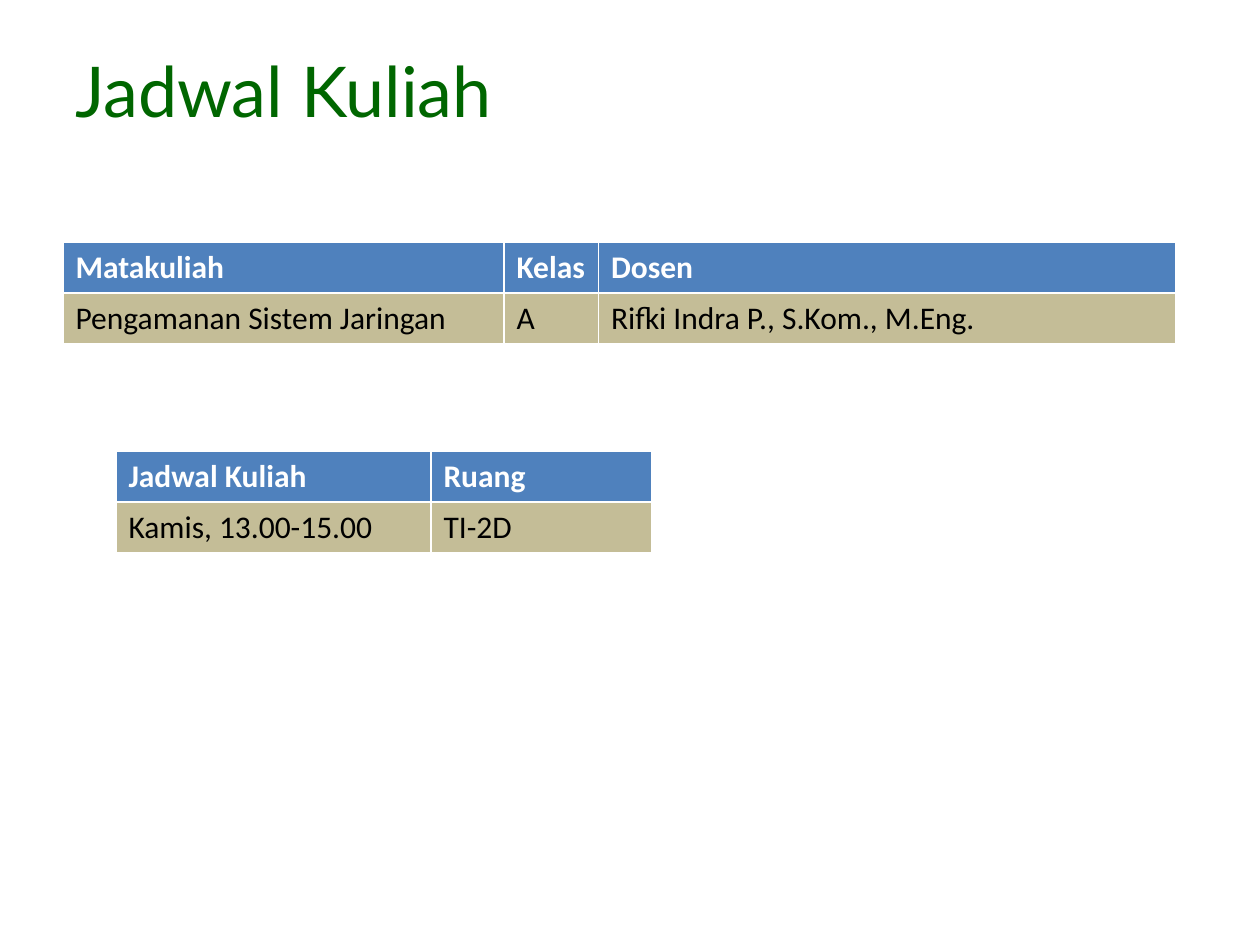
from pptx import Presentation
from pptx.dml.color import RGBColor
from pptx.enum.text import MSO_ANCHOR
from pptx.util import Inches, Pt

BOTTOM = MSO_ANCHOR.BOTTOM
COLORS = {
    "title": "006600",
    "header": "4F81BD",
    "header_text": "FFFFFF",
    "body": "C4BD97",
    "body_text": "000000",
}
ROW_HEIGHT = 0.405


def color(name):
    return RGBColor.from_string(COLORS[name])


def style_font(font, name, size, color_name, bold=False):
    font.name = name
    font.size = Pt(size)
    font.bold = bold
    font.color.rgb = color(color_name)


def add_title(slide, left, top, width, height, wording):
    title = slide.shapes.add_textbox(
        Inches(left), Inches(top), Inches(width), Inches(height)
    )
    frame = title.text_frame
    frame.word_wrap = True
    frame.vertical_anchor = BOTTOM
    frame.text = wording
    style_font(frame.paragraphs[0].runs[0].font, "Lato", 40, "title")


def add_schedule(slide, left, top, widths, rows):
    schedule = slide.shapes.add_table(
        len(rows), len(widths), Inches(left), Inches(top),
        Inches(sum(widths)), Inches(ROW_HEIGHT * len(rows)),
    ).table
    for column, width in zip(schedule.columns, widths):
        column.width = Inches(width)
    for row_index, entries in enumerate(rows):
        role = "body" if row_index else "header"
        for column_index, entry in enumerate(entries):
            cell = schedule.cell(row_index, column_index)
            cell.fill.solid()
            cell.fill.fore_color.rgb = color(role)
            cell.text_frame.text = entry
            style_font(
                cell.text_frame.paragraphs[0].runs[0].font,
                "Calibri", 18, f"{role}_text", bold=role == "header",
            )


def main():
    deck = Presentation()
    deck.slide_width = Inches(10)
    deck.slide_height = Inches(7.5)
    slide = deck.slides.add_slide(deck.slide_layouts[6])
    add_title(slide, 0.5, 0.42, 6.42, 0.67, "Jadwal Kuliah")
    add_schedule(slide, 0.5, 1.92, [3.5, 0.75, 4.58], [
        ["Matakuliah", "Kelas", "Dosen"],
        ["Pengamanan Sistem Jaringan", "A", "Rifki Indra P., S.Kom., M.Eng."],
    ])
    add_schedule(slide, 0.92, 3.58, [2.5, 1.75], [
        ["Jadwal Kuliah", "Ruang"],
        ["Kamis, 13.00-15.00", "TI-2D"],
    ])
    deck.save("out.pptx")


if __name__ == "__main__":
    main()
